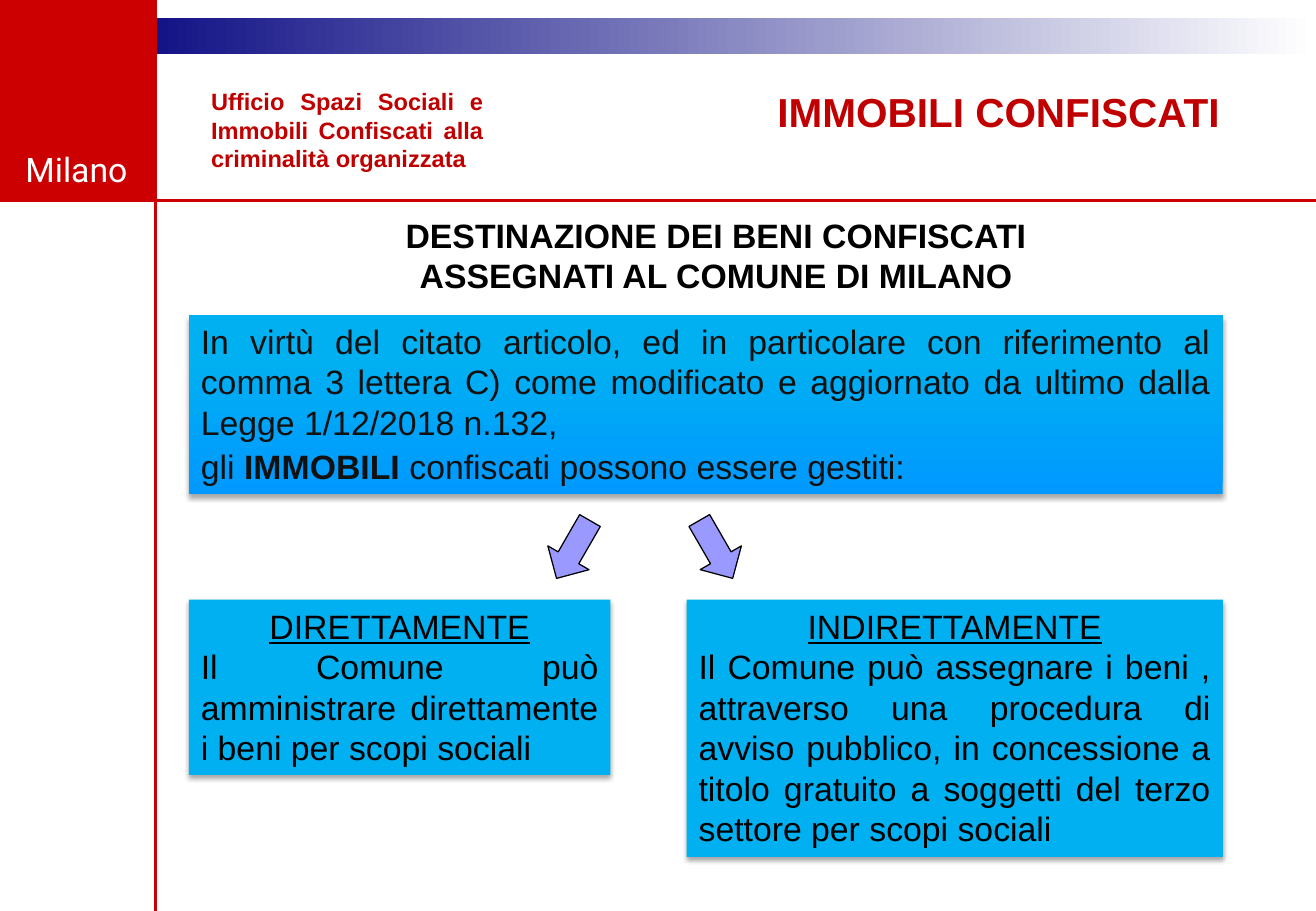
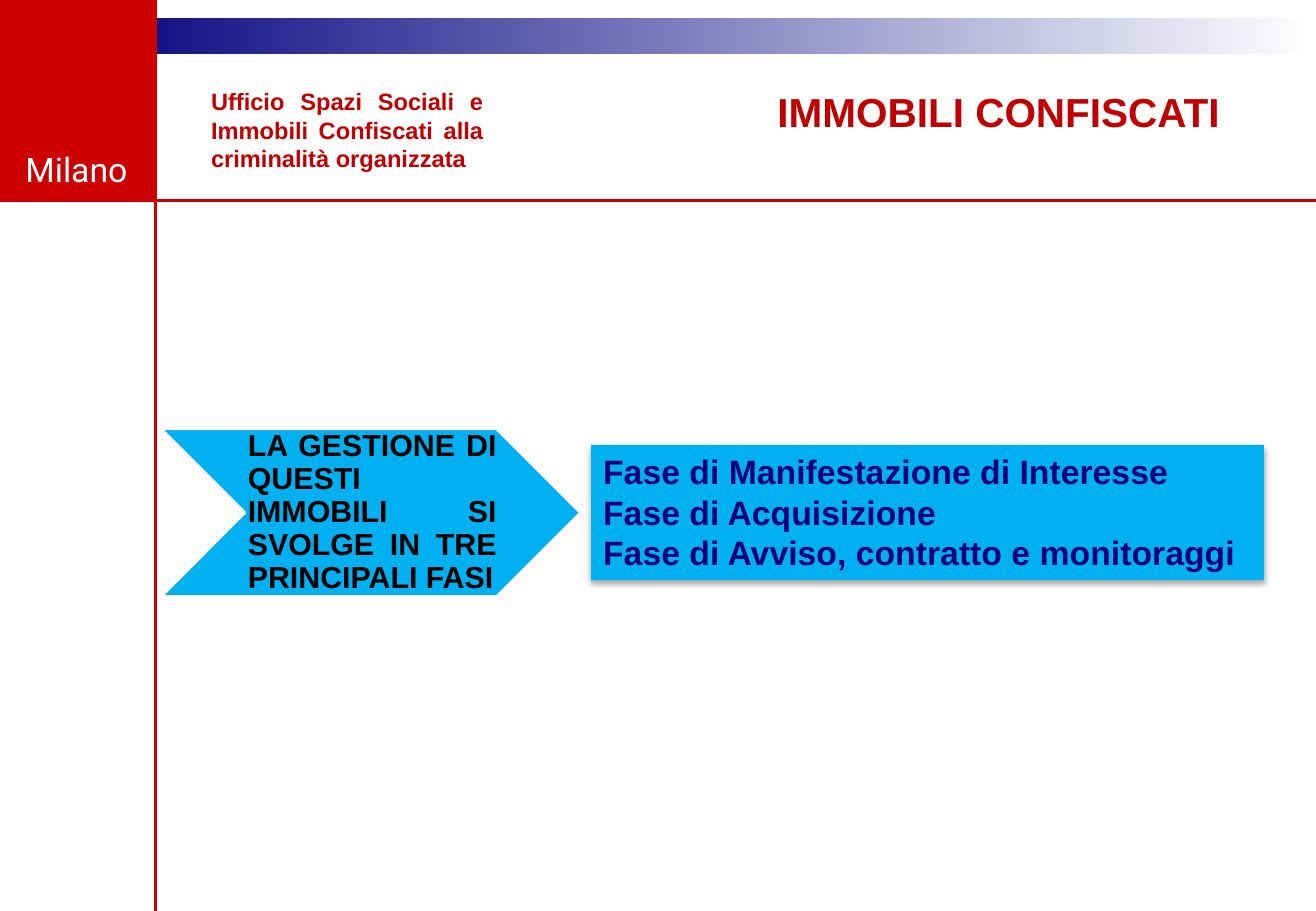
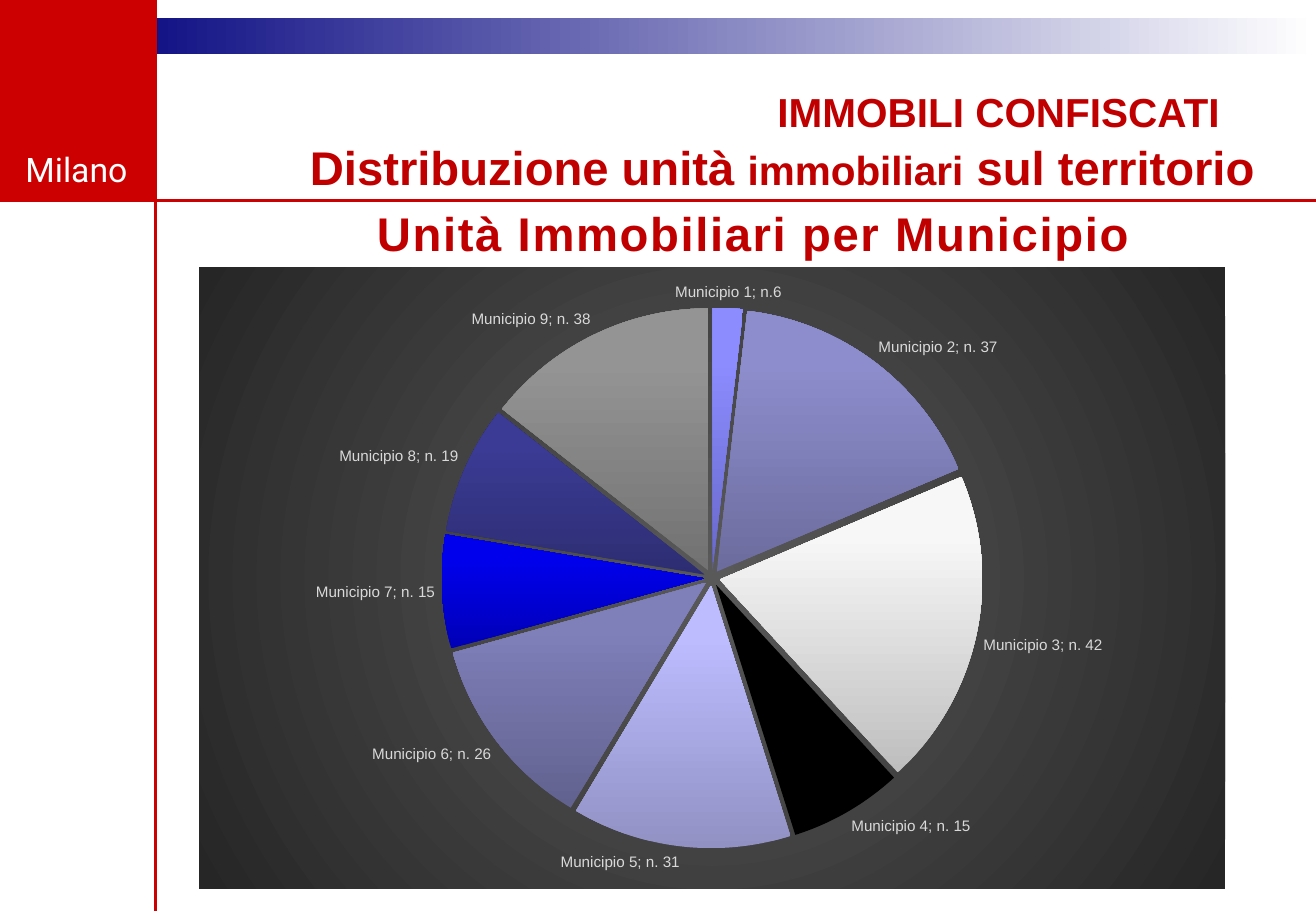
from lxml import etree
from pptx import Presentation
from pptx.chart.data import CategoryChartData
from pptx.dml.color import RGBColor
from pptx.enum.chart import XL_CHART_TYPE, XL_LABEL_POSITION
from pptx.enum.shapes import MSO_CONNECTOR, MSO_SHAPE
from pptx.enum.text import MSO_ANCHOR, PP_ALIGN
from pptx.oxml import parse_xml
from pptx.oxml.ns import nsdecls, qn
from pptx.util import Pt

WIDTH, HEIGHT = 780, 540
RAIL_X, HEADER_Y = 92.2, 118.8
RED, DARK_RED, NAVY, CYAN = "CC0000", "C00000", "00007D", "00B0F0"
LEFT, CENTER, JUSTIFY, RIGHT = (
    PP_ALIGN.LEFT, PP_ALIGN.CENTER, PP_ALIGN.JUSTIFY, PP_ALIGN.RIGHT)

# Text formats
BODY = {"size": 20, "color": "000000"}
STRONG = {**BODY, "bold": True}
HEADING = {**BODY, "underline": True}
INTRO = {**BODY, "color": "111111"}
PHASE = {**STRONG, "color": NAVY}
TITLE = {"size": 24, "color": DARK_RED, "bold": True}
SUBTITLE = {**TITLE, "size": 28}
OFFICE = {**TITLE, "size": 14}
LABEL = {"size": 9, "color": "D9D9D9", "bold": False}

# District, share of the pie, label text, gradient from bottom to top
DISTRICTS = [
    ("Municipio 1", 4, "n.6", ("6767CA", "8C8CFF")),
    ("Municipio 2", 36, "n. 37", ("6C6C9E", "8D8DCD")),
    ("Municipio 3", 42, "n. 42", ("BEBEBE", "F7F7F7")),
    ("Municipio 4", 15, "n. 15", ("000000", "000000")),
    ("Municipio 5", 29, "n. 31", ("9191C4", "BCBCFF")),
    ("Municipio 6", 26, "n. 26", ("62628F", "7F7FBA")),
    ("Municipio 7", 15, "n. 15", ("0000B7", "0000ED")),
    ("Municipio 8", 17, "n. 19", ("2D2D73", "3B3B95")),
    ("Municipio 9", 31, "n. 38", ("727272", "949494")),
]


def rgb(value):
    return RGBColor.from_string(value)


def points(box):
    return [Pt(length) for length in box]


# Formatting
def format_font(font, style):
    values = {"name": "Arial", **style}
    font.color.rgb = rgb(values.pop("color"))
    values["size"] = Pt(values["size"])
    for attribute, value in values.items():
        setattr(font, attribute, value)


def write(frame, paragraphs, insets=(7.2, 3.6, 7.2, 3.6), anchor=MSO_ANCHOR.TOP):
    """Each paragraph is (alignment, [(text, style), ...])."""
    frame.word_wrap = True
    frame.vertical_anchor = anchor
    for side, inset in zip(("left", "top", "right", "bottom"), insets):
        setattr(frame, f"margin_{side}", Pt(inset))
    for index, (alignment, runs) in enumerate(paragraphs):
        paragraph = frame.add_paragraph() if index else frame.paragraphs[0]
        paragraph.alignment = alignment
        for text, style in runs:
            run = paragraph.add_run()
            run.text = text
            format_font(run.font, style)


def fill_gradient(fill, colors, end=1, angle=0):
    fill.gradient()
    fill.gradient_angle = angle
    for stop, color, position in zip(fill.gradient_stops, colors, (0, end)):
        stop.color.rgb = rgb(color)
        stop.position = position


def add_soft_shadow(shape):
    effects = shape.element.spPr.find(qn("a:effectLst"))
    effects.append(parse_xml(
        f'<a:outerShdw {nsdecls("a")} blurRad="{Pt(3.1)}" dist="{Pt(1.8)}" '
        'dir="5400000" rotWithShape="0"><a:srgbClr val="000000">'
        '<a:alpha val="35000"/></a:srgbClr></a:outerShdw>'))


# Elements
def add_preset(slide, preset, box, color=None, outline=None, weight=1):
    shape = slide.shapes.add_shape(preset, *points(box))
    shape.shadow.inherit = False
    if color:
        shape.fill.solid()
        shape.fill.fore_color.rgb = rgb(color)
    if outline:
        shape.line.color.rgb = rgb(outline)
        shape.line.width = Pt(weight)
    else:
        shape.line.fill.background()
    return shape


def add_text(slide, box, alignment, *runs):
    caption = slide.shapes.add_textbox(*points(box))
    write(caption.text_frame, [(alignment, runs)])
    return caption


def add_panel(slide, box, paragraphs):
    panel = add_preset(slide, MSO_SHAPE.RECTANGLE, box, CYAN)
    add_soft_shadow(panel)
    write(panel.text_frame, paragraphs)
    return panel


def add_rule(slide, *ends):
    rule = slide.shapes.add_connector(MSO_CONNECTOR.STRAIGHT, *points(ends))
    rule.line.color.rgb = rgb(RED)
    rule.line.width = Pt(1.5)
    etree.SubElement(rule.element.spPr, qn("a:effectLst"))
    return rule


# Shared parts
def dress_layout(slide):
    """Draw the frame once and hand it to the layout of the slide."""
    band = add_preset(slide, MSO_SHAPE.RECTANGLE, (35.3, 10.8, 744.7, 21.4))
    fill_gradient(band.fill, (NAVY, "FFFFFF"))
    corner = add_preset(slide, MSO_SHAPE.RECTANGLE, (0, 0, RAIL_X, HEADER_Y), RED)
    city = add_text(slide, (0, 84.7, 90.7, 31), CENTER,
                    ("Milano", {"size": 20, "color": "FFFFFF", "name": "Roboto"}))
    header_rule = add_rule(slide, 0, HEADER_Y, WIDTH, HEADER_Y)
    rail_rule = add_rule(slide, RAIL_X, HEIGHT, RAIL_X, 0)
    layout_tree = slide.slide_layout.shapes.element
    for number, part in enumerate((band, corner, city, header_rule, rail_rule), 100):
        part.element.xpath(".//p:cNvPr")[0].set("id", str(number))
        layout_tree.append(part.element)


def start_slide(deck, with_office=True):
    slide = deck.slides.add_slide(deck.slide_layouts[5])
    title = slide.shapes.title
    title.left, title.top, title.width, title.height = points((453.6, 48.2, 278, 36.7))
    write(title.text_frame, [(LEFT, [("IMMOBILI CONFISCATI", TITLE)])])
    if with_office:
        add_text(slide, (118, 48.2, 175.7, 58.3), JUSTIFY,
                 ("Ufficio Spazi Sociali e Immobili Confiscati alla "
                  "criminalità organizzata", OFFICE))
    return slide


# Slides
def build_destination(slide):
    add_text(slide, (223.2, 123.6, 402.5, 55.4), CENTER,
             ("DESTINAZIONE DEI BENI CONFISCATI ASSEGNATI AL COMUNE DI MILANO", STRONG))
    intro = add_panel(slide, (112, 186.5, 612.8, 106.4), [
        (JUSTIFY, [("In virtù del citato articolo, ed in particolare con riferimento "
                    "al comma 3 lettera C) come modificato e aggiornato da ultimo "
                    "dalla Legge 1/12/2018 n.132,", INTRO)]),
        (JUSTIFY, [("gli ", INTRO), ("IMMOBILI ", {**INTRO, "bold": True}),
                   ("confiscati possono essere gestiti:", INTRO)])])
    fill_gradient(intro.fill, ("0099FF", CYAN), 0.77, 90)
    intro.text_frame.paragraphs[0].space_after = Pt(2)

    for left, rotation in ((320, 120), (404.6, 60)):
        arrow = add_preset(slide, MSO_SHAPE.RIGHT_ARROW, (left, 311.6, 39.6, 28.2),
                           "9999FF", "000000", 0.75)
        arrow.rotation = rotation

    for left, width, height, mode, explanation in (
            (112, 249.9, 104, "DIRETTAMENTE",
             "Il Comune può amministrare direttamente i beni per scopi sociali"),
            (407, 317.8, 152.6, "INDIRETTAMENTE",
             "Il Comune può assegnare i beni , attraverso una procedura di avviso "
             "pubblico, in concessione a titolo gratuito a soggetti del terzo "
             "settore per scopi sociali")):
        add_panel(slide, (left, 355.4, width, height),
                  [(CENTER, [(mode, HEADING)]), (JUSTIFY, [(explanation, BODY)])])


def build_phases(slide):
    phases = ("Fase di Manifestazione di Interesse", "Fase di Acquisizione",
              "Fase di Avviso, contratto e monitoraggi")
    add_panel(slide, (350.4, 263.8, 398.8, 80),
              [(JUSTIFY, [(phase, PHASE)]) for phase in phases])
    lead = add_preset(slide, MSO_SHAPE.CHEVRON, (95, 254, 249.4, 99.8),
                      CYAN, "FFFFFF", 2)
    write(lead.text_frame,
          [(JUSTIFY, [("LA GESTIONE DI QUESTI IMMOBILI SI SVOLGE IN TRE "
                       "PRINCIPALI FASI", {**STRONG, "size": 18})])],
          (2, 1, 0, 1), MSO_ANCHOR.MIDDLE)
    lead.text_frame.paragraphs[0].line_spacing = 0.9


def style_chart_area(chart, pie_width=0.53, pie_height=0.87):
    """Radial background, and the pie centred on it."""
    space = chart.element
    space.find(qn("c:chart")).addnext(parse_xml(
        f'<c:spPr {nsdecls("c", "a")}><a:gradFill><a:gsLst>'
        '<a:gs pos="0"><a:srgbClr val="595959"/></a:gs>'
        '<a:gs pos="100000"><a:srgbClr val="262626"/></a:gs></a:gsLst>'
        '<a:path path="circle"><a:fillToRect l="50000" t="50000" r="50000" '
        'b="50000"/></a:path></a:gradFill><a:ln><a:noFill/></a:ln></c:spPr>'))
    plot_area = space.find(".//" + qn("c:plotArea"))
    for automatic in plot_area.findall(qn("c:layout")):
        plot_area.remove(automatic)
    place = "".join(f'<c:{key} val="{value}"/>' for key, value in (
        ("layoutTarget", "inner"), ("xMode", "edge"), ("yMode", "edge"),
        ("x", (1 - pie_width) / 2), ("y", (1 - pie_height) / 2),
        ("w", pie_width), ("h", pie_height)))
    plot_area.insert(0, parse_xml(
        f'<c:layout {nsdecls("c")}><c:manualLayout>{place}</c:manualLayout></c:layout>'))


def label_districts(series):
    labels = series.data_labels
    for attribute, value in {
            "show_value": True, "show_category_name": True,
            "show_percentage": False, "show_legend_key": False,
            "number_format": "0", "number_format_is_linked": False,
            "position": XL_LABEL_POSITION.OUTSIDE_END}.items():
        setattr(labels, attribute, value)
    format_font(labels.font, LABEL)
    for index, (district, _, count, _) in enumerate(DISTRICTS):
        label = series.points[index].data_label
        run = label.text_frame.paragraphs[0].add_run()
        run.text = f"{district}; {count}"
        format_font(run.font, LABEL)
        label.position = XL_LABEL_POSITION.OUTSIDE_END
    for shown in series._element.iter(qn("c:showCatName")):
        shown.set("val", "1")


def add_district_pie(slide, box):
    data = CategoryChartData(number_format="0")
    data.categories = [district for district, *_ in DISTRICTS]
    data.add_series("Series 1", [share for _, share, *_ in DISTRICTS])
    chart = slide.shapes.add_chart(XL_CHART_TYPE.PIE, *points(box), data).chart
    chart.has_title = chart.has_legend = False
    format_font(chart.font, {"size": 10, "color": "000000"})
    plot = chart.plots[0]
    plot.vary_by_categories = True
    series = plot.series[0]
    series._element.find(qn("c:tx")).addnext(
        parse_xml(f'<c:explosion {nsdecls("c")} val="3"/>'))
    for index, (*_, colors) in enumerate(DISTRICTS):
        wedge = series.points[index].format
        fill_gradient(wedge.fill, colors, 0.8, 90)
        wedge.line.fill.background()
    label_districts(series)
    style_chart_area(chart)


def build_distribution(slide):
    add_text(slide, (106.6, 78.5, 644, 41), RIGHT,
             ("Distribuzione unità ", SUBTITLE), ("immobiliari", TITLE),
             (" sul territorio", SUBTITLE))
    heading = add_text(slide, (214.6, 117.8, 463.7, 41), CENTER,
                       ("Unità Immobiliari per Municipio", SUBTITLE))
    heading.element.find(".//" + qn("a:rPr")).set("spc", "100")
    add_district_pie(slide, (118, 158.4, 608.2, 368.4))


def main():
    deck = Presentation()
    deck.slide_width, deck.slide_height = points((WIDTH, HEIGHT))
    destination = start_slide(deck)
    dress_layout(destination)
    build_destination(destination)
    build_phases(start_slide(deck))
    build_distribution(start_slide(deck, with_office=False))
    deck.save("out.pptx")


if __name__ == "__main__":
    main()
